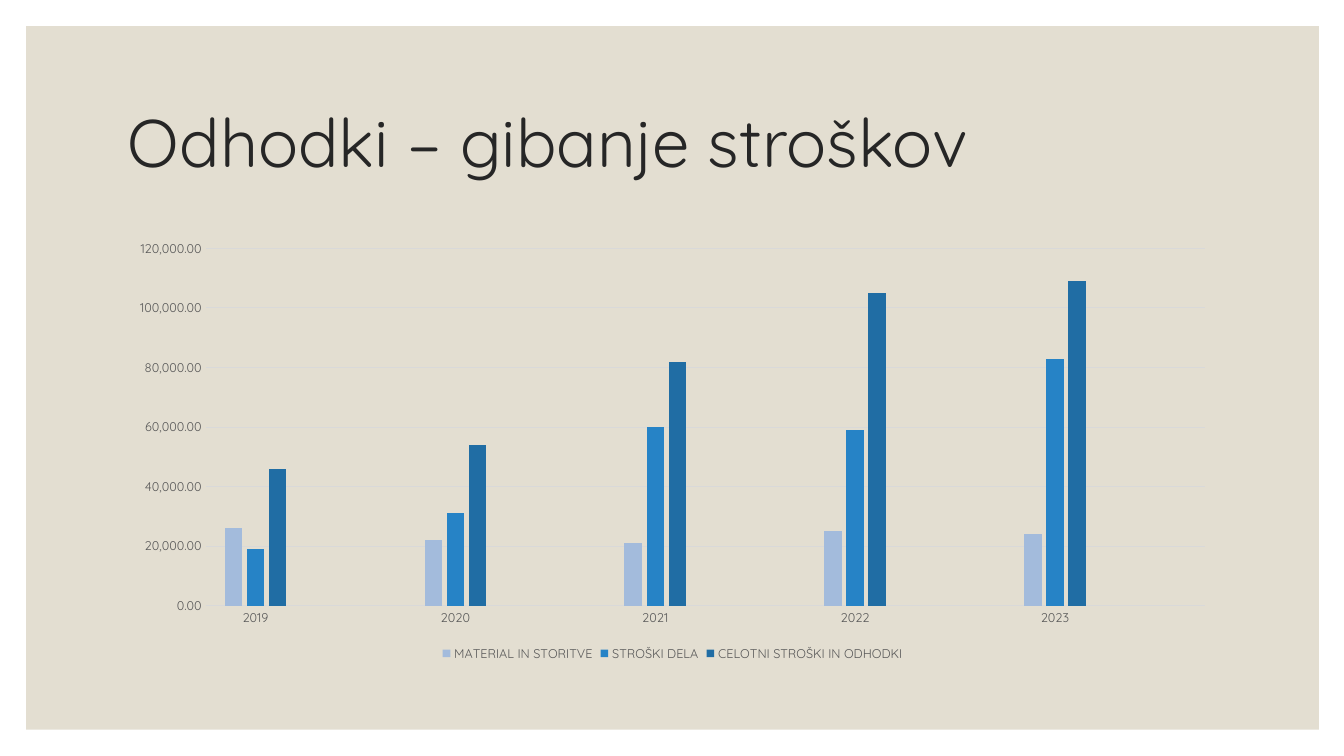
from pptx import Presentation
from pptx.chart.data import CategoryChartData
from pptx.dml.color import RGBColor
from pptx.enum.chart import XL_CHART_TYPE, XL_LEGEND_POSITION, XL_TICK_MARK
from pptx.enum.shapes import MSO_SHAPE
from pptx.enum.text import MSO_ANCHOR
from pptx.util import Inches, Pt

COLUMNS = XL_CHART_TYPE.COLUMN_CLUSTERED
BOTTOM = XL_LEGEND_POSITION.BOTTOM
NO_TICK = XL_TICK_MARK.NONE
RECTANGLE = MSO_SHAPE.RECTANGLE
MIDDLE = MSO_ANCHOR.MIDDLE

SAND = RGBColor(0xE3, 0xDE, 0xD1)
INK = RGBColor(0x26, 0x26, 0x26)
GREY = RGBColor(0x59, 0x59, 0x59)
LIGHT_GREY = RGBColor(0xD9, 0xD9, 0xD9)
PALE_BLUE = RGBColor(0xA3, 0xBB, 0xDC)
BLUE = RGBColor(0x26, 0x83, 0xC6)
DARK_BLUE = RGBColor(0x20, 0x6D, 0xA4)

FONT = "Quicksand"
YEARS = ["2019", "2020", "2021", "2022", "2023"]
COSTS = [
    ("MATERIAL IN STORITVE", PALE_BLUE, [26000, 22000, 21000, 25000, 24000]),
    ("STROŠKI DELA", BLUE, [19000, 31000, 60000, 59000, 83000]),
    ("CELOTNI STROŠKI IN ODHODKI", DARK_BLUE,
     [46000, 54000, 82000, 105000, 109000]),
]


def set_all(target, values):
    for name, value in values.items():
        setattr(target, name, value)


def style_font(font, size, color):
    set_all(font, {"name": FONT, "size": Pt(size), "bold": False})
    font.color.rgb = color


def style_line(line):
    line.color.rgb = LIGHT_GREY
    line.width = Pt(0.75)


def spaced(items, gap):
    """Follow each item with a gap, so that years stand apart."""
    return [entry for item in items for entry in (item, gap)]


def add_panel(slide):
    panel = slide.shapes.add_shape(
        RECTANGLE, Inches(0.26), Inches(0.26), Inches(12.82), Inches(6.98))
    panel.shadow.inherit = False
    panel.fill.solid()
    panel.fill.fore_color.rgb = SAND
    panel.line.fill.background()


def add_title(slide, text):
    title = slide.shapes.add_textbox(
        Inches(1.17), Inches(0.7), Inches(11), Inches(1.5))
    set_all(title.text_frame, {"word_wrap": True, "vertical_anchor": MIDDLE})
    paragraph = title.text_frame.paragraphs[0]
    paragraph.line_spacing = 0.9
    run = paragraph.add_run()
    run.text = text
    style_font(run.font, 48, INK)


def style_axes(chart):
    for axis in (chart.category_axis, chart.value_axis):
        set_all(axis, {"major_tick_mark": NO_TICK, "minor_tick_mark": NO_TICK})
        style_font(axis.tick_labels.font, 9, GREY)
    style_line(chart.category_axis.format.line)

    amounts = chart.value_axis
    set_all(amounts, {"minimum_scale": 0, "maximum_scale": 120000,
                      "major_unit": 20000, "has_major_gridlines": True})
    set_all(amounts.tick_labels, {"number_format": "#,##0.00",
                                  "number_format_is_linked": False})
    amounts.format.line.fill.background()
    style_line(amounts.major_gridlines.format.line)


def add_cost_chart(slide):
    data = CategoryChartData()
    data.categories = spaced(YEARS, "")
    for name, _, amounts in COSTS:
        data.add_series(name, spaced(amounts, None))
    chart = slide.shapes.add_chart(
        COLUMNS, Inches(1.17), Inches(2.3), Inches(11), Inches(4.3), data).chart
    set_all(chart, {"has_title": False, "has_legend": True})
    style_font(chart.font, 10, GREY)
    style_axes(chart)

    # Columns
    plot = chart.plots[0]
    set_all(plot, {"gap_width": 219, "overlap": -27, "vary_by_categories": False})
    for series, (_, color, _) in zip(plot.series, COSTS):
        series.invert_if_negative = False
        series.format.fill.solid()
        series.format.fill.fore_color.rgb = color

    # Legend
    set_all(chart.legend, {"position": BOTTOM, "include_in_layout": False})
    style_font(chart.legend.font, 9, GREY)


def main():
    deck = Presentation()
    set_all(deck, {"slide_width": Inches(13.33), "slide_height": Inches(7.5)})
    slide = deck.slides.add_slide(deck.slide_layouts[6])
    add_panel(slide)
    add_title(slide, "Odhodki – gibanje stroškov")
    add_cost_chart(slide)
    deck.save("out.pptx")


if __name__ == "__main__":
    main()
